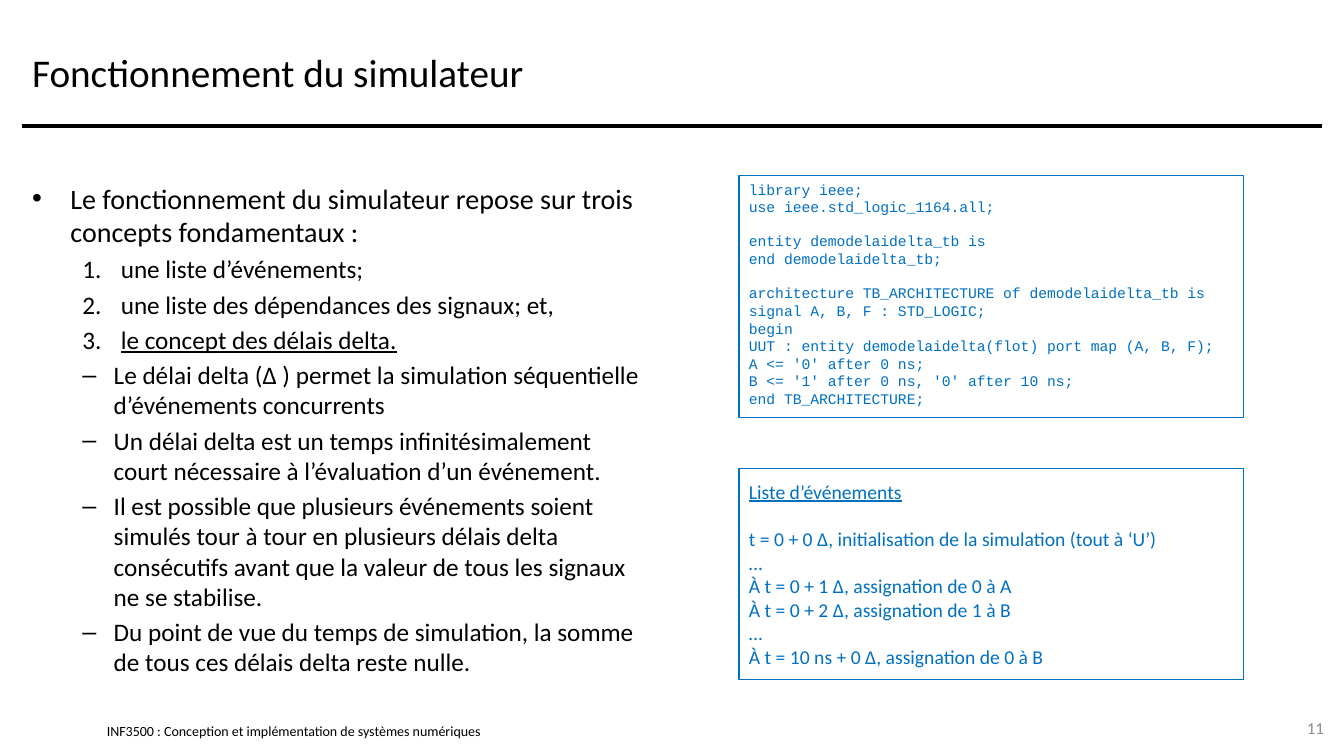
from lxml.etree import SubElement
from pptx import Presentation
from pptx.dml.color import RGBColor
from pptx.enum.shapes import MSO_CONNECTOR, MSO_SHAPE
from pptx.enum.text import MSO_ANCHOR, PP_ALIGN
from pptx.oxml.ns import qn
from pptx.util import Inches, Pt

BLACK, BLUE, GREY, WHITE = "000000", "0070C0", "8C8C8C", "FFFFFF"

INTRODUCTION = "Le fonctionnement du simulateur repose sur trois concepts fondamentaux :"
CONCEPTS = [
    "une liste d’événements;",
    "une liste des dépendances des signaux; et,",
    "le concept des délais delta.",
]
DETAILS = [
    "Le délai delta (Δ ) permet la simulation séquentielle d’événements concurrents",
    "Un délai delta est un temps infinitésimalement court nécessaire à l’évaluation "
    "d’un événement.",
    "Il est possible que plusieurs événements soient simulés tour à tour en plusieurs "
    "délais delta consécutifs avant que la valeur de tous les signaux ne se stabilise.",
    "Du point de vue du temps de simulation, la somme de tous ces délais delta reste nulle.",
]
CODE_BLOCKS = [
    ["library ieee;", "use ieee.std_logic_1164.all;"],
    ["entity demodelaidelta_tb is", "end demodelaidelta_tb;"],
    [
        "architecture TB_ARCHITECTURE of demodelaidelta_tb is",
        "signal A, B, F : STD_LOGIC;",
        "begin",
        "UUT : entity demodelaidelta(flot) port map (A, B, F);",
        "A <= '0' after 0 ns;",
        "B <= '1' after 0 ns, '0' after 10 ns;",
        "end TB_ARCHITECTURE;",
    ],
]
EVENT_BLOCKS = [
    ["Liste d’événements"],
    [
        "t = 0 + 0 Δ, initialisation de la simulation (tout à ‘U’)",
        "…",
        "À t = 0 + 1 Δ, assignation de 0 à A",
        "À t = 0 + 2 Δ, assignation de 1 à B",
        "…",
        "À t = 10 ns + 0 Δ, assignation de 0 à B",
    ],
]


def color(value):
    return RGBColor.from_string(value)


def add_text_box(slide, left, top, width, height, anchor=MSO_ANCHOR.MIDDLE):
    shape = slide.shapes.add_textbox(Inches(left), Inches(top), Inches(width), Inches(height))
    shape.text_frame.word_wrap = True
    shape.text_frame.vertical_anchor = anchor
    return shape.text_frame


def next_paragraph(frame):
    """Return the empty first paragraph, or a new one after the others."""
    first = frame.paragraphs[0]
    return first if not first.runs else frame.add_paragraph()


def add_run(paragraph, text, size, text_color=BLACK, font="Calibri", underline=None):
    run = paragraph.add_run()
    run.text = text
    run.font.size = Pt(size)
    run.font.name = font
    run.font.underline = underline
    run.font.color.rgb = color(text_color)


def set_bullet(paragraph, margin, hanging, character=None):
    """Give a hanging bullet, or a number if there is no character."""
    properties = paragraph._p.get_or_add_pPr()
    properties.set("marL", str(Inches(margin)))
    properties.set("indent", str(-Inches(hanging)))
    SubElement(properties, qn("a:buFont"), typeface="Arial" if character else "+mj-lt")
    if character:
        SubElement(properties, qn("a:buChar"), char=character)
    else:
        SubElement(properties, qn("a:buAutoNum"), type="arabicPeriod")


def add_header(slide, left, top, width, height):
    frame = add_text_box(slide, left, top, width, height)
    add_run(frame.paragraphs[0], "Fonctionnement du simulateur", 28)
    bottom = Inches(top + height)
    rule = slide.shapes.add_connector(
        MSO_CONNECTOR.STRAIGHT, Inches(left), bottom, Inches(left + width), bottom)
    rule.line.color.rgb = color(BLACK)
    rule.line.width = Pt(3)
    SubElement(rule._element.spPr, qn("a:effectLst"))


def add_body(slide, left, top, width, height):
    frame = add_text_box(slide, left, top, width, height, MSO_ANCHOR.TOP)
    paragraph = next_paragraph(frame)
    set_bullet(paragraph, 0.38, 0.38, "•")
    add_run(paragraph, INTRODUCTION, 20)
    items = [(text, 0.88, 0.38, None) for text in CONCEPTS]
    items += [(text, 0.81, 0.31, "–") for text in DETAILS]
    for text, margin, hanging, character in items:
        paragraph = next_paragraph(frame)
        paragraph.level = 1
        set_bullet(paragraph, margin, hanging, character)
        paragraph.space_before = Pt(3.6)
        add_run(paragraph, text, 18, underline=True if text == CONCEPTS[-1] else None)


def add_framed_box(slide, left, top, width, height, anchor):
    shape = slide.shapes.add_shape(
        MSO_SHAPE.RECTANGLE, Inches(left), Inches(top), Inches(width), Inches(height))
    shape.shadow.inherit = False
    shape.fill.solid()
    shape.fill.fore_color.rgb = color(WHITE)
    shape.line.color.rgb = color(BLUE)
    shape.line.width = Pt(0.75)
    shape.text_frame.word_wrap = True
    shape.text_frame.vertical_anchor = anchor
    return shape.text_frame


def add_blocks(frame, blocks, size, font, gap, underline_first=False):
    """Write blocks of lines, with a gap in points between blocks."""
    for block_index, block in enumerate(blocks):
        for line_index, line in enumerate(block):
            paragraph = next_paragraph(frame)
            paragraph.alignment = PP_ALIGN.LEFT
            if block_index and not line_index:
                paragraph.space_before = Pt(gap)
            underline = True if underline_first and not block_index else None
            add_run(paragraph, line, size, BLUE, font, underline)


def add_code(slide, left, top, width, height):
    frame = add_framed_box(slide, left, top, width, height, MSO_ANCHOR.TOP)
    add_blocks(frame, CODE_BLOCKS, 10.5, "Courier New", 11.9)


def add_events(slide, left, top, width, height):
    frame = add_framed_box(slide, left, top, width, height, MSO_ANCHOR.MIDDLE)
    frame.margin_top = frame.margin_bottom = Inches(0.1)
    add_blocks(frame, EVENT_BLOCKS, 14, "Calibri", 17.1, underline_first=True)


def add_footer(slide, left, top, width, height):
    frame = add_text_box(slide, left, top, width, height)
    frame.margin_left = frame.margin_right = frame.margin_top = frame.margin_bottom = 0
    add_run(frame.paragraphs[0],
            "INF3500 : Conception et implémentation de systèmes numériques", 10)


def add_page_number(slide, left, top, width, height):
    paragraph = add_text_box(slide, left, top, width, height).paragraphs[0]
    paragraph.alignment = PP_ALIGN.RIGHT
    add_run(paragraph, "11", 12, GREY)


def main():
    presentation = Presentation()
    presentation.slide_width = Inches(13.33)
    presentation.slide_height = Inches(7.5)
    slide = presentation.slides.add_slide(presentation.slide_layouts[6])
    add_header(slide, 0.22, 0.17, 12.89, 1.08)
    add_body(slide, 0.22, 1.75, 6.33, 5.08)
    add_code(slide, 7.33, 1.74, 5, 2.4)
    add_events(slide, 7.33, 4.65, 5, 2.09)
    add_footer(slide, 1.06, 7.17, 5.11, 0.17)
    add_page_number(slide, 12.56, 7.02, 0.67, 0.4)
    presentation.save("out.pptx")


if __name__ == "__main__":
    main()
